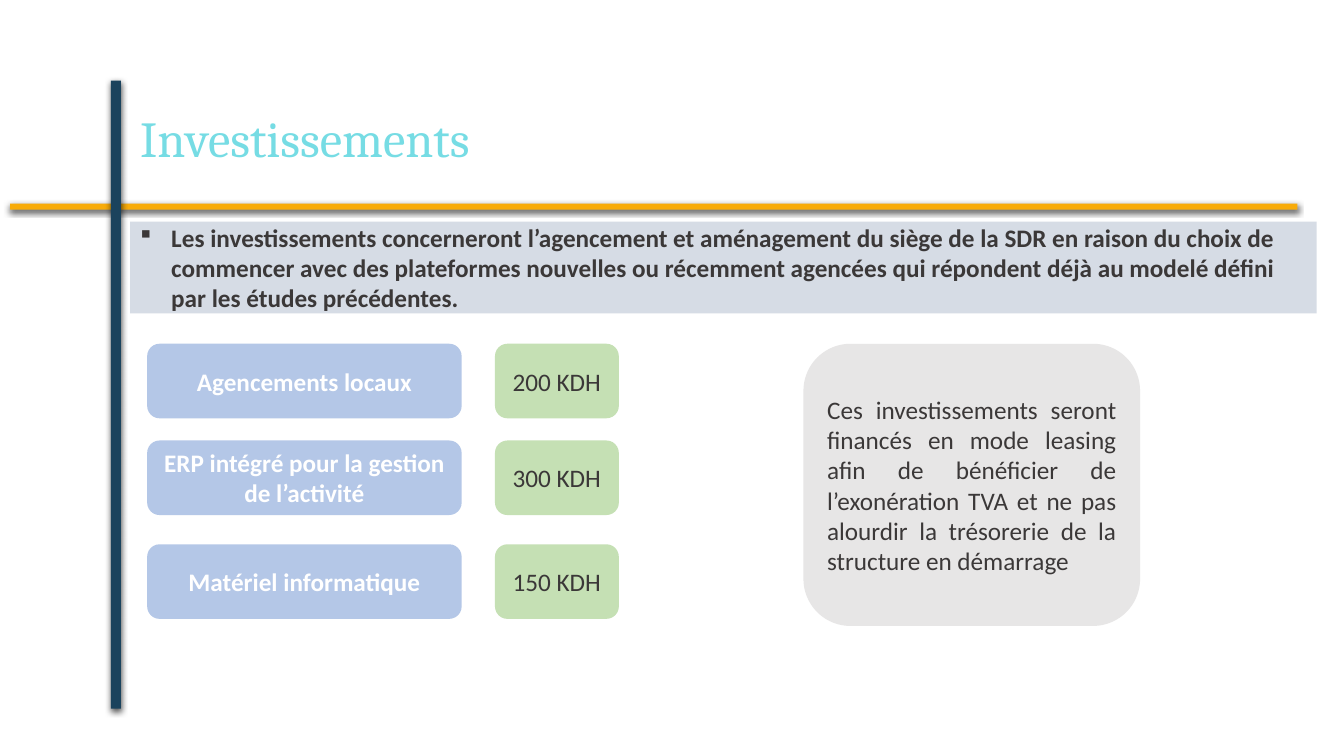
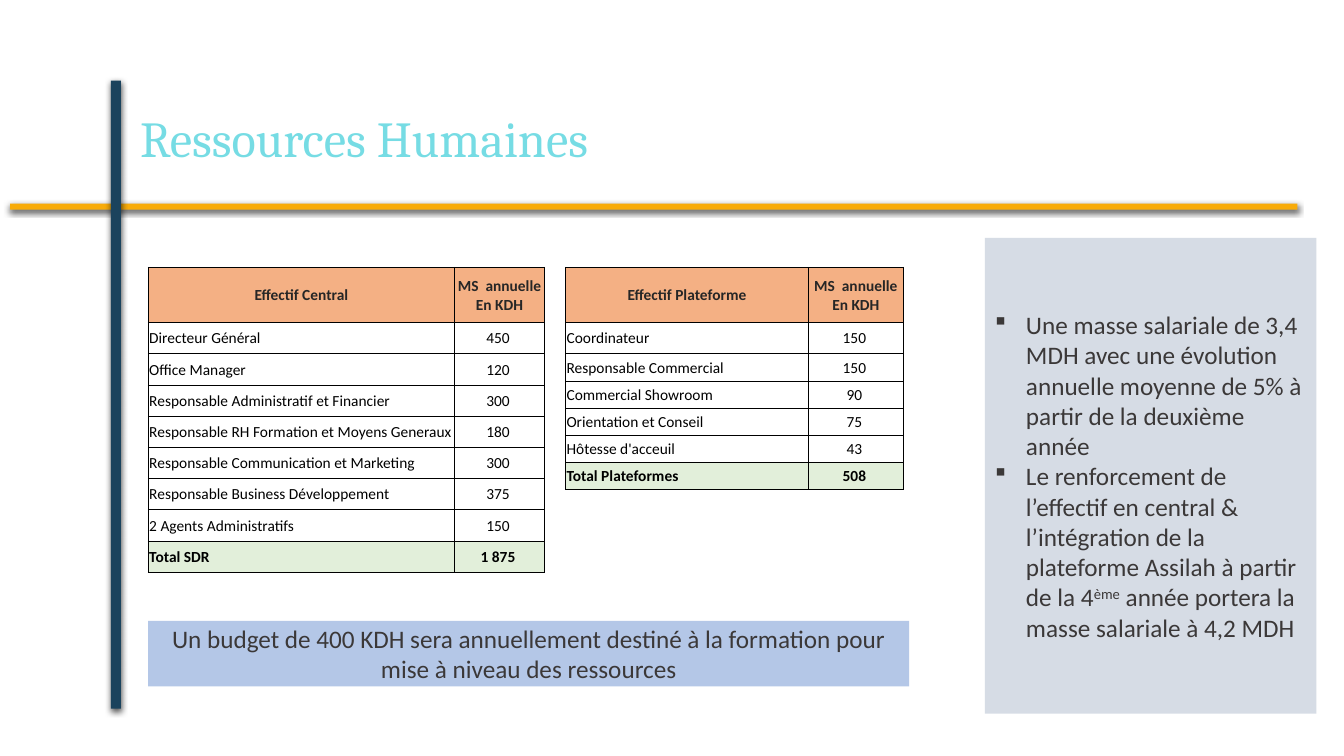
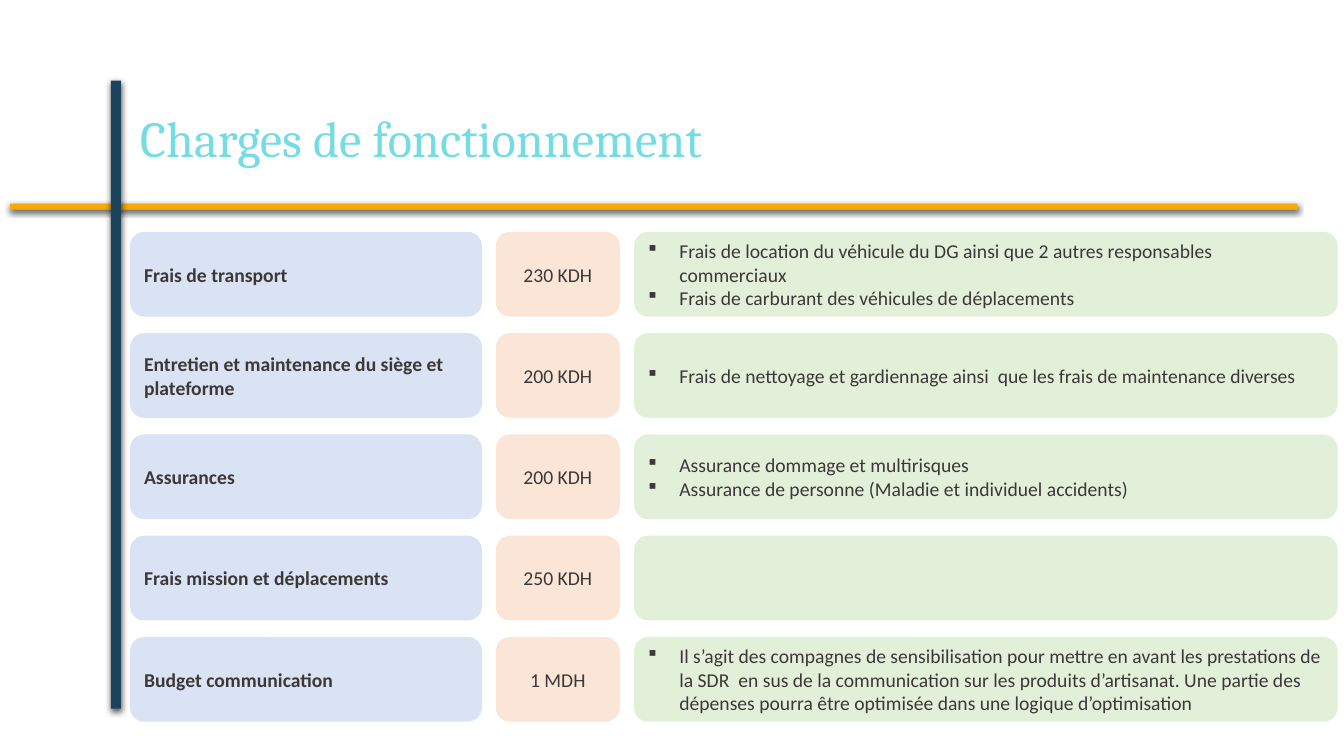
from dataclasses import dataclass
from typing import NamedTuple

from lxml.etree import SubElement as Sub
from pptx import Presentation
from pptx.dml.color import RGBColor as Rgb
from pptx.enum.shapes import MSO_SHAPE as Kind
from pptx.enum.text import MSO_ANCHOR as Anchor, PP_ALIGN as Align
from pptx.oxml.ns import qn
from pptx.shapes.autoshape import Shape
from pptx.slide import Slide
from pptx.table import _Cell as Cell
from pptx.text.text import TextFrame as Frame
from pptx.util import Inches, Pt

WIDE, HIGH = Inches(13.333), Inches(7.5)
LEFT, EDGE = 9.68, 11.03
BODY, HEAD = "Calibri", "Cambria"
INDENT = Inches(0.31)

WHITE = Rgb(0xFF, 0xFF, 0xFF)
BLACK = Rgb(0x00, 0x00, 0x00)
INK = Rgb(0x3B, 0x38, 0x38)
DARK = Rgb(0x26, 0x26, 0x26)
AQUA = Rgb(0x76, 0xDC, 0xE4)
AMBER = Rgb(0xF8, 0xAB, 0x08)
NAVY = Rgb(0x1B, 0x43, 0x5D)
BLUE = Rgb(0xB4, 0xC7, 0xE7)
PALE = Rgb(0xDA, 0xE3, 0xF3)
SLATE = Rgb(0xD6, 0xDC, 0xE5)
GREEN = Rgb(0xC5, 0xE0, 0xB4)
MINT = Rgb(0xE2, 0xF0, 0xD9)
TOTAL = Rgb(0xE2, 0xEF, 0xDA)
PEACH = Rgb(0xFB, 0xE5, 0xD6)
ORANGE = Rgb(0xF4, 0xB0, 0x84)
GREY = Rgb(0xE7, 0xE6, 0xE6)


class Area(NamedTuple):
    """Percentages of the slide's width and height."""
    x: float
    y: float
    w: float
    h: float


class Bit(NamedTuple):
    text: str
    sup: bool = False


Line = tuple[Bit, ...]


@dataclass(frozen=True)
class Style:
    size: int = 18
    ink: Rgb = INK
    bold: bool = False
    align: Align = Align.LEFT
    face: str = BODY
    bullet: bool = False
    space: float = 1.0


@dataclass(frozen=True)
class Staff:
    left: float
    cols: tuple[float, float]
    rows: tuple[float, ...]
    title: str
    posts: tuple[tuple[str, str], ...]


class Cost(NamedTuple):
    name: str
    sum: str
    notes: tuple[str, ...] = ()


class Asset(NamedTuple):
    top: float
    name: str
    sum: str


TITLE = Style(36, AQUA, face=HEAD, space=0.9)
POINT = Style(bullet=True)
LEAD = Style(bold=True, bullet=True)
MID = Style(align=Align.CENTER)
LABEL = Style(ink=WHITE, bold=True, align=Align.CENTER)
NAME = Style(14, bold=True)
SUM = Style(14, align=Align.CENTER)
NOTE = Style(14, bullet=True)

ASSETS = (
    Asset(45.47, "Agencements locaux", "200 KDH"),
    Asset(58.27, "ERP intégré pour la gestion de l’activité", "300 KDH"),
    Asset(72, "Matériel informatique", "150 KDH"),
)

STAFF = (
    Staff(EDGE, (22.8, 6.68), (7.33,) + (4.13,) * 8, "Effectif Central", (
        ("Directeur Général", "450"),
        ("Office Manager", "120"),
        ("Responsable Administratif et Financier", "300"),
        ("Responsable RH Formation et Moyens Generaux", "180"),
        ("Responsable Communication et Marketing", "300"),
        ("Responsable Business Développement", "375"),
        ("2 Agents Administratifs", "150"),
        ("Total SDR", "1 875"),
    )),
    Staff(42.08, (18.08, 7.05), (7.33, 4.13) + (3.6,) * 5, "Effectif Plateforme", (
        ("Coordinateur", "150"),
        ("Responsable Commercial", "150"),
        ("Commercial Showroom", "90"),
        ("Orientation et Conseil", "75"),
        ("Hôtesse d'acceuil", "43"),
        ("Total Plateformes", "508"),
    )),
)

COSTS = (
    Cost("Frais de transport", "230 KDH", (
        "Frais de location du véhicule du DG ainsi que 2 autres responsables commerciaux",
        "Frais de carburant des véhicules de déplacements",
    )),
    Cost("Entretien et maintenance du siège et plateforme", "200 KDH", (
        "Frais de nettoyage et gardiennage ainsi  que les frais de maintenance diverses",
    )),
    Cost("Assurances", "200 KDH", (
        "Assurance dommage et multirisques",
        "Assurance de personne (Maladie et individuel accidents)",
    )),
    Cost("Frais mission et déplacements", "250 KDH"),
    Cost("Budget communication", "1 MDH", (
        "Il s’agit des compagnes de sensibilisation pour mettre en avant les prestations de "
        "la SDR  en sus de la communication sur les produits d’artisanat. Une partie des "
        "dépenses pourra être optimisée dans une logique d’optimisation",
    )),
)


def across(share: float) -> int:
    return round(WIDE * share / 100)


def down(share: float) -> int:
    return round(HIGH * share / 100)


def place(area: Area) -> tuple[int, int, int, int]:
    return across(area.x), down(area.y), across(area.w), down(area.h)


def plain(*texts: str) -> tuple[Line, ...]:
    return tuple((Bit(text),) for text in texts)


def write(frame: Frame, lines: tuple[Line, ...], style: Style) -> None:
    frame.word_wrap = True
    frame.vertical_anchor = Anchor.MIDDLE
    for i, line in enumerate(lines):
        para = frame.add_paragraph() if i else frame.paragraphs[0]
        para.alignment = style.align
        para.line_spacing = style.space
        if style.bullet:
            props = para._p.get_or_add_pPr()
            props.set("marL", str(INDENT))
            props.set("indent", str(-INDENT))
            Sub(props, qn("a:buFont"), typeface="Wingdings")
            Sub(props, qn("a:buChar"), char="§")
        for bit in line:
            run = para.add_run()
            run.text = bit.text
            font = run.font
            font.name, font.size, font.bold = style.face, Pt(style.size), style.bold
            font.color.rgb = style.ink
            if bit.sup:
                run._r.get_or_add_rPr().set("baseline", "30000")


def block(slide: Slide, area: Area, fill: Rgb, lines: tuple[Line, ...] = (),
          style: Style = MID, kind: Kind = Kind.RECTANGLE) -> Shape:
    shape = slide.shapes.add_shape(kind, *place(area))
    shape.shadow.inherit = False
    shape.fill.solid()
    shape.fill.fore_color.rgb = fill
    shape.line.fill.background()
    if lines:
        write(shape.text_frame, lines, style)
    return shape


def card(slide: Slide, area: Area, fill: Rgb, style: Style, *texts: str) -> None:
    block(slide, area, fill, plain(*texts), style, Kind.ROUNDED_RECTANGLE)


def shade(shape: Shape) -> None:
    glow = Sub(shape._element.spPr.find(qn("a:effectLst")), qn("a:outerShdw"),
               blurRad=str(Pt(4.5)), dist=str(Pt(1.5)), dir="5400000", rotWithShape="0")
    tint = Sub(glow, qn("a:srgbClr"), val=str(BLACK))
    Sub(tint, qn("a:alpha"), val="63000")


def start(deck: Presentation, title: str) -> Slide:
    slide = deck.slides.add_slide(deck.slide_layouts[6])
    shade(block(slide, Area(0.75, 26.93, 95.78, 0.8), AMBER))
    shade(block(slide, Area(8.25, 10.67, 0.75, 83.07), NAVY))
    box = slide.shapes.add_textbox(*place(Area(LEFT, 10.67, 86.25, 16)))
    write(box.text_frame, plain(title), TITLE)
    return slide


def rule(cell: Cell) -> None:
    props = cell._tc.get_or_add_tcPr()
    for side in ("lnL", "lnR", "lnT", "lnB"):
        edge = Sub(props, qn(f"a:{side}"), w=str(Pt(0.5)))
        Sub(Sub(edge, qn("a:solidFill")), qn("a:srgbClr"), val=str(BLACK))


def grid(slide: Slide, staff: Staff) -> None:
    area = Area(staff.left, 35.33, sum(staff.cols), sum(staff.rows))
    table = slide.shapes.add_table(len(staff.rows), 2, *place(area)).table
    table.first_row = table.horz_banding = False
    for col, share in zip(table.columns, staff.cols):
        col.width = across(share)
    for row, share in zip(table.rows, staff.rows):
        row.height = down(share)
    data = ((staff.title, "MS  annuelle En KDH"),) + staff.posts
    last = len(data) - 1
    for r, texts in enumerate(data):
        for c, text in enumerate(texts):
            cell = table.cell(r, c)
            cell.margin_left = cell.margin_top = Inches(0.01)
            cell.margin_right = Inches(0.04 if r and c else 0.01)
            cell.margin_bottom = 0
            cell.vertical_anchor = Anchor.MIDDLE
            rule(cell)
            if r in (0, last):
                cell.fill.solid()
                cell.fill.fore_color.rgb = TOTAL if r else ORANGE
            else:
                cell.fill.background()
            align = Align.LEFT if r and not c else Align.CENTER
            style = Style(11, BLACK if r else DARK, r in (0, last), align)
            write(cell.text_frame, plain(text), style)


def invest(deck: Presentation) -> None:
    slide = start(deck, "Investissements")
    block(slide, Area(LEFT, 29.33, 88.28, 12.13), SLATE, plain(
        "Les investissements concerneront l’agencement et aménagement du siège de la SDR "
        "en raison du choix de commencer avec des plateformes nouvelles ou récemment "
        "agencées qui répondent déjà au modelé défini par les études précédentes."), LEAD)
    for asset in ASSETS:
        card(slide, Area(10.95, asset.top, 23.4, 9.87), BLUE, LABEL, asset.name)
        card(slide, Area(36.83, asset.top, 9.22, 9.87), GREEN, MID, asset.sum)
    card(slide, Area(59.78, ASSETS[0].top, 25.05, 37.33), GREY, Style(align=Align.JUSTIFY),
         "Ces investissements seront financés en mode leasing afin de bénéficier de "
         "l’exonération TVA et ne pas alourdir la trésorerie de la structure en démarrage")


def people(deck: Presentation) -> None:
    slide = start(deck, "Ressources Humaines")
    for staff in STAFF:
        grid(slide, staff)
    growth = (
        (Bit("Une masse salariale de 3,4 MDH avec une évolution annuelle moyenne de 5% "
             "à partir de la deuxième année"),),
        (Bit("Le renforcement de l’effectif en central & l’intégration de la plateforme "
             "Assilah à partir de la 4"), Bit("ème", True),
         Bit(" année portera la masse salariale à 4,2 MDH")),
    )
    block(slide, Area(73.28, 31.47, 24.68, 62.93), SLATE, growth, POINT)
    block(slide, Area(EDGE, 82.13, 56.63, 8.67), BLUE, plain(
        "Un budget de 400 KDH sera annuellement destiné à la formation pour "
        "mise à niveau des ressources"))


def running(deck: Presentation) -> None:
    slide = start(deck, "Charges de fonctionnement")
    for i, cost in enumerate(COSTS):
        top, tall = 30.67 + 13.4 * i, 11.2
        card(slide, Area(LEFT, top, 26.18, tall), PALE, NAME, cost.name)
        card(slide, Area(36.9, top, 9.22, tall), PEACH, SUM, cost.sum)
        card(slide, Area(47.18, top, 52.35, tall), MINT, NOTE, *cost.notes)


def main() -> None:
    deck = Presentation()
    deck.slide_width, deck.slide_height = WIDE, HIGH
    for build in (invest, people, running):
        build(deck)
    deck.save("out.pptx")


if __name__ == "__main__":
    main()
